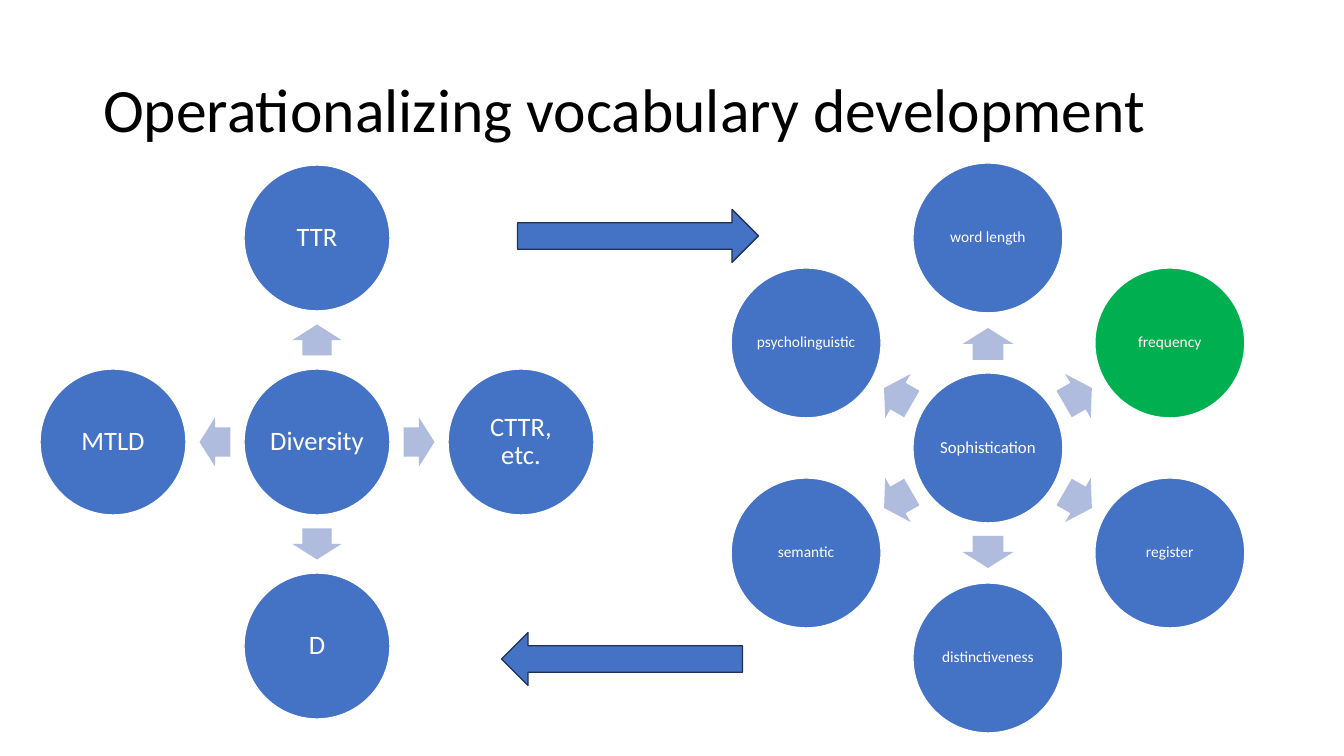
"""Build the slide on operationalizing vocabulary development."""
from math import cos, radians, sin

from pptx import Presentation
from pptx.dml.color import RGBColor
from pptx.enum.shapes import MSO_SHAPE
from pptx.enum.text import MSO_ANCHOR, PP_ALIGN
from pptx.util import Pt

OVAL, RIGHT_ARROW = MSO_SHAPE.OVAL, MSO_SHAPE.RIGHT_ARROW
MIDDLE, LEFT, CENTER = MSO_ANCHOR.MIDDLE, PP_ALIGN.LEFT, PP_ALIGN.CENTER
BLUE = RGBColor(0x44, 0x72, 0xC4)
GREEN = RGBColor(0x00, 0xB0, 0x50)
PALE_BLUE = RGBColor(0xB0, 0xBC, 0xDE)
NAVY = RGBColor(0x1E, 0x32, 0x56)
WHITE = RGBColor(0xFF, 0xFF, 0xFF)
BLACK = RGBColor(0x00, 0x00, 0x00)
FONT = "Calibri"
PX = 914400 / 100.8

TITLE = "Operationalizing vocabulary development"
TITLE_BOX = (93, 40, 1159, 146)
WHEELS = [
    {"hub": "Diversity", "spokes": ["TTR", "CTTR, etc.", "D", "MTLD"],
     "center": (317, 442), "radius": 204, "diameter": 146, "arrow": (31, 49),
     "arrow_radius": 102, "hub_size": 19, "spoke_size": 19, "inset": 3},
    {"hub": "Sophistication",
     "spokes": ["word length", "frequency", "register", "distinctiveness",
                "semantic", "psycholinguistic"],
     "center": (988, 448), "radius": 210, "diameter": 150, "arrow": (32, 51),
     "arrow_radius": 104, "hub_size": 12, "spoke_size": 11, "inset": 2},
]
HIGHLIGHTS = {"frequency": GREEN}
LINK_SIZE = (241, 53)
LINKS = [((638, 236), 0), ((622, 659), 180)]


def emu(pixels):
    return round(pixels * PX)


def add_centered(slide, kind, center, size, fill, line=None):
    left, top = (middle - length / 2 for middle, length in zip(center, size))
    shape = slide.shapes.add_shape(kind, *map(emu, (left, top, *size)))
    shape.shadow.inherit = False
    shape.fill.solid()
    shape.fill.fore_color.rgb = fill
    if line is None:
        shape.line.fill.background()
    else:
        shape.line.color.rgb = line
        shape.line.width = Pt(1)
    return shape


def write(frame, text, size, color, alignment):
    frame.vertical_anchor = MIDDLE
    frame.word_wrap = True
    paragraph = frame.paragraphs[0]
    paragraph.alignment = alignment
    paragraph.line_spacing = 0.9
    run = paragraph.add_run()
    run.text = text
    run.font.name = FONT
    run.font.size = Pt(size)
    run.font.color.rgb = color


def add_circle(slide, wheel, text, center, size):
    fill = HIGHLIGHTS.get(text, BLUE)
    circle = add_centered(slide, OVAL, center, (wheel["diameter"],) * 2, fill, WHITE)
    frame = circle.text_frame
    frame.margin_left = frame.margin_right = emu(wheel["inset"])
    frame.margin_top = frame.margin_bottom = emu(wheel["inset"])
    write(frame, text, size, WHITE, CENTER)


def point_on_wheel(wheel, radius, angle):
    x, y = wheel["center"]
    return x + radius * cos(radians(angle)), y + radius * sin(radians(angle))


def add_wheel(slide, wheel):
    add_circle(slide, wheel, wheel["hub"], wheel["center"], wheel["hub_size"])
    step = 360 / len(wheel["spokes"])
    for index, spoke in enumerate(wheel["spokes"]):
        angle = (270 + index * step) % 360
        arrow_center = point_on_wheel(wheel, wheel["arrow_radius"], angle)
        arrow = add_centered(slide, RIGHT_ARROW, arrow_center, wheel["arrow"], PALE_BLUE)
        arrow.adjustments[0] = 0.6
        arrow.rotation = angle
        center = point_on_wheel(wheel, wheel["radius"], angle)
        add_circle(slide, wheel, spoke, center, wheel["spoke_size"])


def main():
    presentation = Presentation()
    presentation.slide_width, presentation.slide_height = emu(1344), emu(756)
    slide = presentation.slides.add_slide(presentation.slide_layouts[5])
    title = slide.shapes.title
    title.left, title.top, title.width, title.height = map(emu, TITLE_BOX)
    write(title.text_frame, TITLE, 44, BLACK, LEFT)
    for wheel in WHEELS:
        add_wheel(slide, wheel)
    for center, angle in LINKS:
        link = add_centered(slide, RIGHT_ARROW, center, LINK_SIZE, BLUE, NAVY)
        link.rotation = angle
    presentation.save("out.pptx")


if __name__ == "__main__":
    main()
